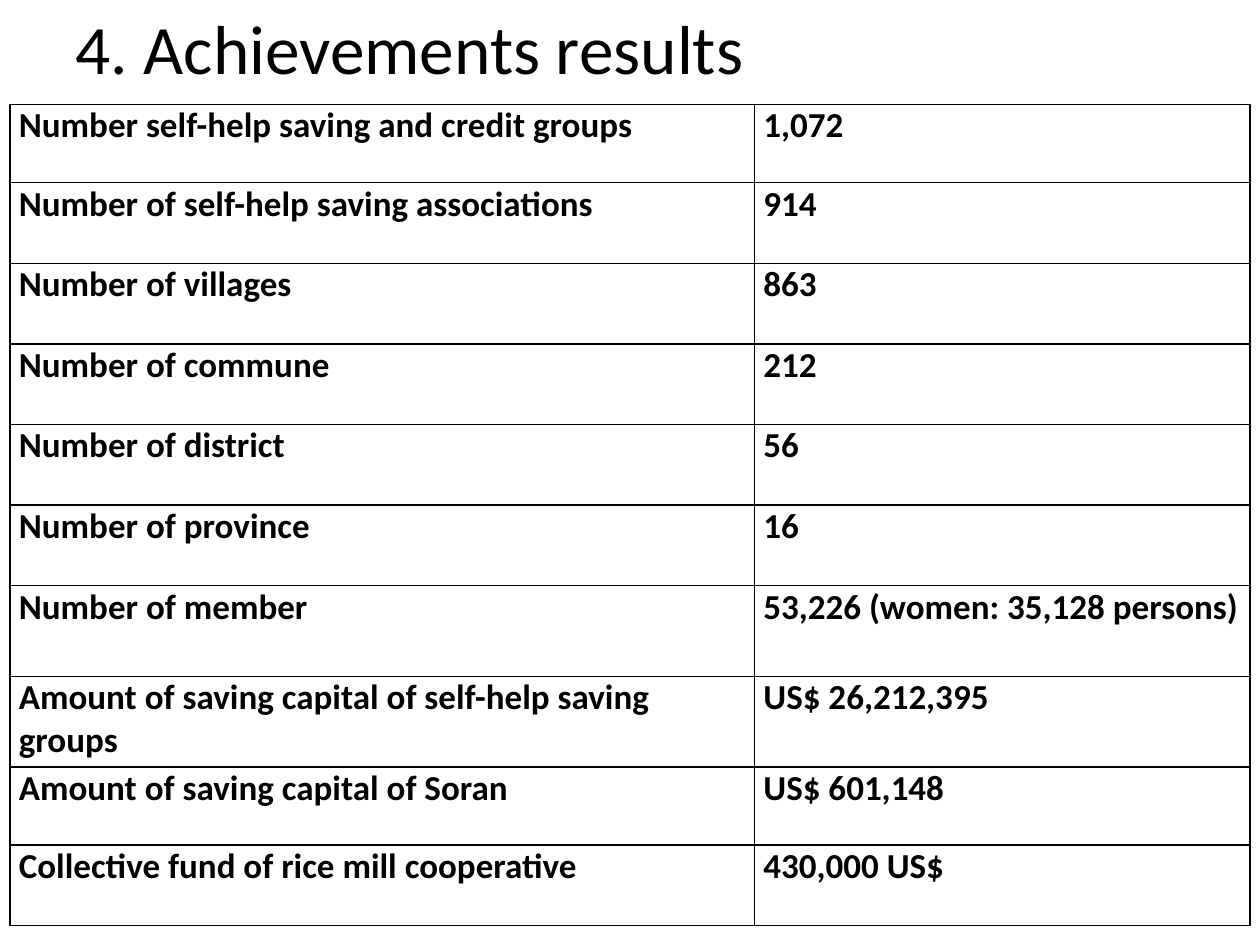
from dataclasses import dataclass

from lxml.etree import SubElement
from pptx import Presentation
from pptx.dml.color import RGBColor
from pptx.enum.text import MSO_ANCHOR, PP_ALIGN
from pptx.oxml.ns import qn
from pptx.util import Inches, Pt


@dataclass(frozen=True)
class Theme:
    font: str = "Calibri"
    ink: str = "000000"
    title_size: float = 39.6
    cell_size: float = 20
    border_width: float = 1


COLUMN_WIDTHS = [5.91, 3.93]
ACHIEVEMENTS = [
    # label, result, row height
    ("Number self-help saving and credit groups", "1,072", 0.62),
    ("Number of self-help saving associations", "914", 0.64),
    ("Number of villages", "863", 0.64),
    ("Number of commune", "212", 0.64),
    ("Number of district", "56", 0.64),
    ("Number of province", "16", 0.64),
    ("Number of member", "53,226 (women: 35,128 persons)", 0.72),
    ("Amount of saving capital of self-help saving groups", "US$ 26,212,395", 0.72),
    ("Amount of saving capital of Soran", "US$ 601,148", 0.62),
    ("Collective fund of rice mill cooperative", "430,000 US$", 0.64),
]


class SlideBuilder:
    def __init__(self, slide, theme):
        self.slide = slide
        self.theme = theme

    def style_paragraph(self, paragraph, size, bold=False):
        paragraph.alignment = PP_ALIGN.LEFT
        font = paragraph.font
        font.name = self.theme.font
        font.size = Pt(size)
        font.bold = bold
        font.color.rgb = RGBColor.from_string(self.theme.ink)

    def add_title(self, text, left, top, width, height):
        title = self.slide.shapes.title
        title.left, title.top = Inches(left), Inches(top)
        title.width, title.height = Inches(width), Inches(height)
        title.text_frame.text = text
        title.text_frame.vertical_anchor = MSO_ANCHOR.MIDDLE
        self.style_paragraph(title.text_frame.paragraphs[0], self.theme.title_size)

    def add_borders(self, cell):
        properties = cell._tc.get_or_add_tcPr()
        for side in ("a:lnL", "a:lnR", "a:lnT", "a:lnB"):
            line = SubElement(properties, qn(side), w=str(Pt(self.theme.border_width)))
            fill = SubElement(line, qn("a:solidFill"))
            SubElement(fill, qn("a:srgbClr"), val=self.theme.ink)

    def format_cell(self, cell, text):
        cell.text = text
        cell.margin_left = cell.margin_right = Inches(0.07)
        cell.margin_top = cell.margin_bottom = 0
        cell.vertical_anchor = MSO_ANCHOR.TOP
        self.style_paragraph(cell.text_frame.paragraphs[0], self.theme.cell_size, bold=True)
        self.add_borders(cell)
        cell.fill.background()

    def add_table(self, rows, column_widths, left, top):
        """Draw a bordered table from rows of cell texts ending in a row height."""
        height = sum(row[-1] for row in rows)
        table = self.slide.shapes.add_table(
            len(rows), len(column_widths), Inches(left), Inches(top),
            Inches(sum(column_widths)), Inches(height),
        ).table
        table.first_row = table.horz_banding = False
        for column, width in zip(table.columns, column_widths):
            column.width = Inches(width)
        for table_row, (*texts, row_height) in zip(table.rows, rows):
            table_row.height = Inches(row_height)
            for cell, text in zip(table_row.cells, texts):
                self.format_cell(cell, text)


def main():
    presentation = Presentation()
    presentation.slide_width, presentation.slide_height = Inches(10), Inches(7.5)
    title_only = presentation.slide_layouts[5]
    builder = SlideBuilder(presentation.slides.add_slide(title_only), Theme())
    builder.add_title("4. Achievements results", 0.5, 0, 9, 0.75)
    builder.add_table(ACHIEVEMENTS, COLUMN_WIDTHS, 0.08, 0.83)
    presentation.save("out.pptx")


if __name__ == "__main__":
    main()
